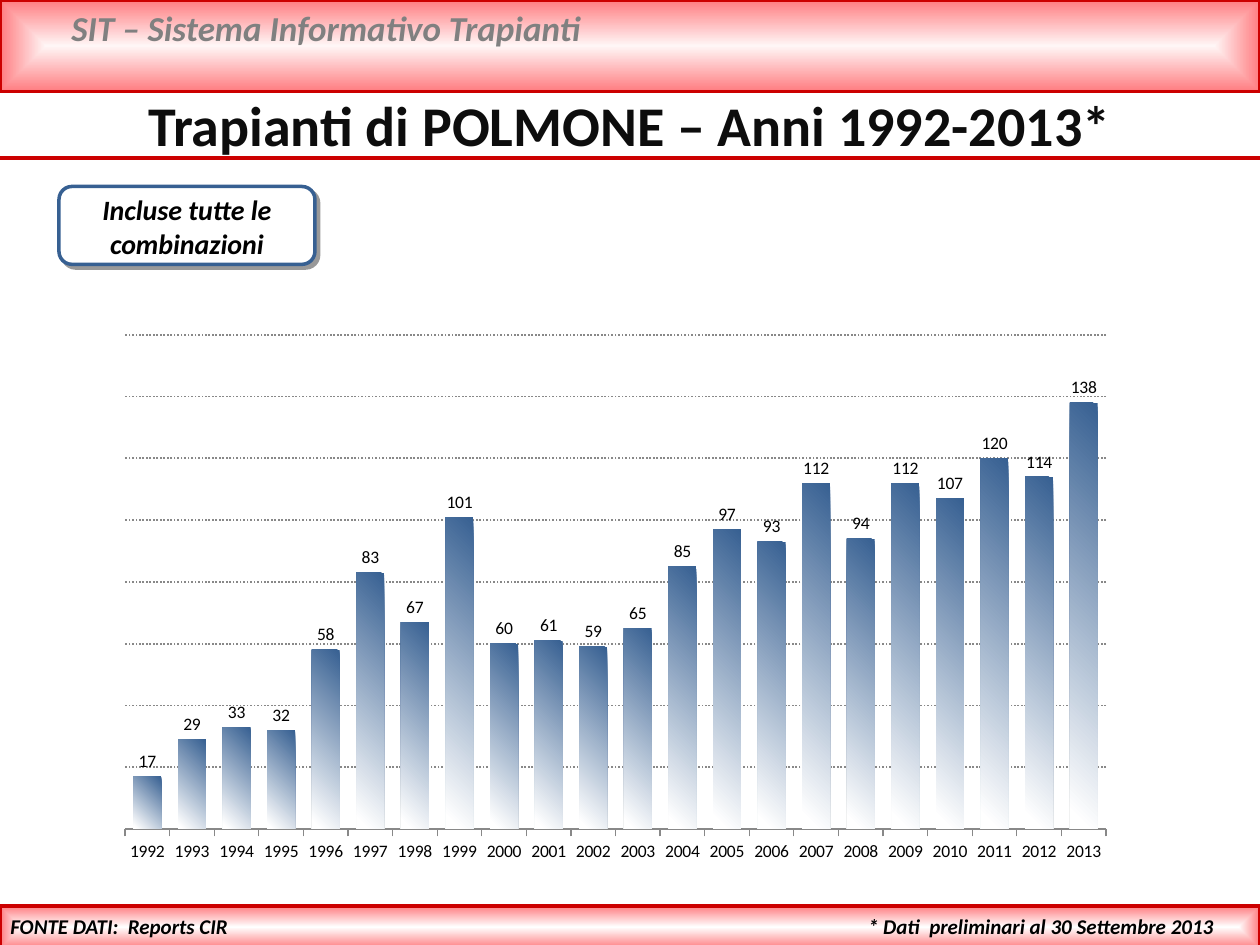
from lxml import etree
from pptx import Presentation
from pptx.chart.data import CategoryChartData
from pptx.dml.color import RGBColor
from pptx.enum.chart import XL_CHART_TYPE, XL_LABEL_POSITION, XL_TICK_MARK
from pptx.enum.dml import MSO_LINE
from pptx.enum.shapes import MSO_CONNECTOR, MSO_SHAPE
from pptx.enum.text import PP_ALIGN
from pptx.oxml import parse_xml
from pptx.oxml.ns import nsdecls, qn
from pptx.util import Cm, Pt

COLUMNS = XL_CHART_TYPE.COLUMN_CLUSTERED
OUTSIDE = XL_LABEL_POSITION.OUTSIDE_END
TICK_NONE, TICK_OUT = XL_TICK_MARK.NONE, XL_TICK_MARK.OUTSIDE
DOTTED = MSO_LINE.ROUND_DOT
STRAIGHT = MSO_CONNECTOR.STRAIGHT
RECTANGLE, ROUNDED = MSO_SHAPE.RECTANGLE, MSO_SHAPE.ROUNDED_RECTANGLE
LEFT, CENTER, RIGHT = PP_ALIGN.LEFT, PP_ALIGN.CENTER, PP_ALIGN.RIGHT
FONT = "Calibri"
RED, BLUE, BLACK, WHITE = "CC0000", "376092", "000000", "FFFFFF"


def color(value):
    return RGBColor.from_string(value)


def set_gradient(fill, stops):
    fill.gradient()
    for stop, (position, value) in zip(fill.gradient_stops, stops):
        stop.position = position
        stop.color.rgb = color(value)


deck = Presentation()
deck.slide_width, deck.slide_height = Cm(25.4), Cm(19.05)
page = deck.slides.add_slide(deck.slide_layouts[6])

for top, height, center_color in [(0, 1.85, "FFF6F6"), (18.26, 0.86, WHITE)]:
    band = page.shapes.add_shape(RECTANGLE, 0, Cm(top), Cm(25.4), Cm(height))
    band.shadow.inherit = False
    set_gradient(band.fill, [(0, center_color), (1, "FF7C80")])
    gradient = band._element.spPr.find(qn("a:gradFill"))
    gradient.remove(gradient.find(qn("a:lin")))
    gradient.append(parse_xml(
        f'<a:path {nsdecls("a")} path="shape">'
        '<a:fillToRect l="50000" t="50000" r="50000" b="50000"/></a:path>'))
    band.line.color.rgb = color(RED)
    band.line.width = Pt(2)

rule = page.shapes.add_connector(STRAIGHT, 0, Cm(3.18), Cm(25.4), Cm(3.18))
rule.line.color.rgb = color(RED)
rule.line.width = Pt(2)
etree.SubElement(rule._element.spPr, qn("a:effectLst"))

badge = page.shapes.add_shape(ROUNDED, Cm(1.19), Cm(3.76), Cm(5.16), Cm(1.57))
badge.fill.solid()
badge.fill.fore_color.rgb = color(WHITE)
badge.line.color.rgb = color(BLUE)
badge.line.width = Pt(2)
badge.shadow.inherit = False
effects = badge._element.spPr.find(qn("a:effectLst"))
effects.append(parse_xml(
    f'<a:outerShdw {nsdecls("a")} blurRad="0" dist="38100" dir="2700000" algn="tl" '
    'rotWithShape="0"><a:srgbClr val="000000"><a:alpha val="40000"/></a:srgbClr>'
    '</a:outerShdw>'))

texts = [
    ("SIT – Sistema Informativo Trapianti", (1.19, 0, 22.81, 1.12), LEFT, True, "808080",
     {"size": Pt(20), "bold": True, "italic": True}),
    ("* Dati  preliminari al 30 Settembre 2013", (17.25, 18.29, 8.15, 0.76), LEFT, True, BLACK,
     {"size": Pt(12), "bold": True, "italic": True}),
    ("Trapianti di POLMONE – Anni 1992-2013*", (0, 1.7, 25.4, 1.63), CENTER, True, "0D0D0D",
     {"size": Pt(32), "bold": True}),
    ("Incluse tutte le combinazioni", (1.19, 3.76, 5.16, 1.63), CENTER, True, BLACK,
     {"size": Pt(16), "bold": True, "italic": True}),
    ("FONTE DATI:  Reports CIR", (-0.1, 18.29, 4.95, 0.76), RIGHT, False, BLACK,
     {"size": Pt(12), "bold": True, "italic": True}),
]
for text, place, alignment, wrap, text_color, font_format in texts:
    box = page.shapes.add_textbox(*[Cm(length) for length in place])
    box.text_frame.word_wrap = wrap
    para = box.text_frame.paragraphs[0]
    para.alignment = alignment
    span = para.add_run()
    span.text = text
    span.font.name = FONT
    span.font.color.rgb = color(text_color)
    for name, value in font_format.items():
        setattr(span.font, name, value)

data = CategoryChartData()
data.categories = [str(year) for year in range(1992, 2014)]
data.add_series("Series 1", [17, 29, 33, 32, 58, 83, 67, 101, 60, 61, 59, 65,
                             85, 97, 93, 112, 94, 112, 107, 120, 114, 138])
chart = page.shapes.add_chart(COLUMNS, Cm(2.11), Cm(6.53), Cm(20.6), Cm(11.07), data).chart
chart.has_legend = False
chart.has_title = False
chart.font.name = FONT
chart.font.size = Pt(10)
chart.font.color.rgb = color(BLACK)

plot_area = chart._chartSpace.chart.plotArea
for layout in plot_area.findall(qn("c:layout")):
    plot_area.remove(layout)
plot_area.insert(0, parse_xml(
    f'<c:layout {nsdecls("c")}><c:manualLayout><c:layoutTarget val="inner"/>'
    '<c:xMode val="edge"/><c:yMode val="edge"/><c:x val="0.02"/><c:y val="0.02"/>'
    '<c:w val="0.96"/><c:h val="0.9"/></c:manualLayout></c:layout>'))

years = chart.category_axis
years.major_tick_mark = TICK_OUT
years.minor_tick_mark = TICK_NONE
years.has_major_gridlines = False
years.format.line.color.rgb = color("888888")

counts = chart.value_axis
axis_format = {"visible": False, "minimum_scale": 0, "maximum_scale": 160,
               "major_unit": 20, "has_major_gridlines": True}
for name, value in axis_format.items():
    setattr(counts, name, value)
grid = counts.major_gridlines.format.line
grid.color.rgb = color("888888")
grid.width = Pt(1)
grid.dash_style = DOTTED

plot = chart.plots[0]
plot_format = {"gap_width": 60, "overlap": -20, "vary_by_categories": False,
               "has_data_labels": True}
for name, value in plot_format.items():
    setattr(plot, name, value)
plot.data_labels.show_value = True
plot.data_labels.position = OUTSIDE
bars = plot.series[0].format.fill
set_gradient(bars, [(0, BLUE), (0.96, WHITE)])
bars.gradient_angle = 225

deck.save("out.pptx")
